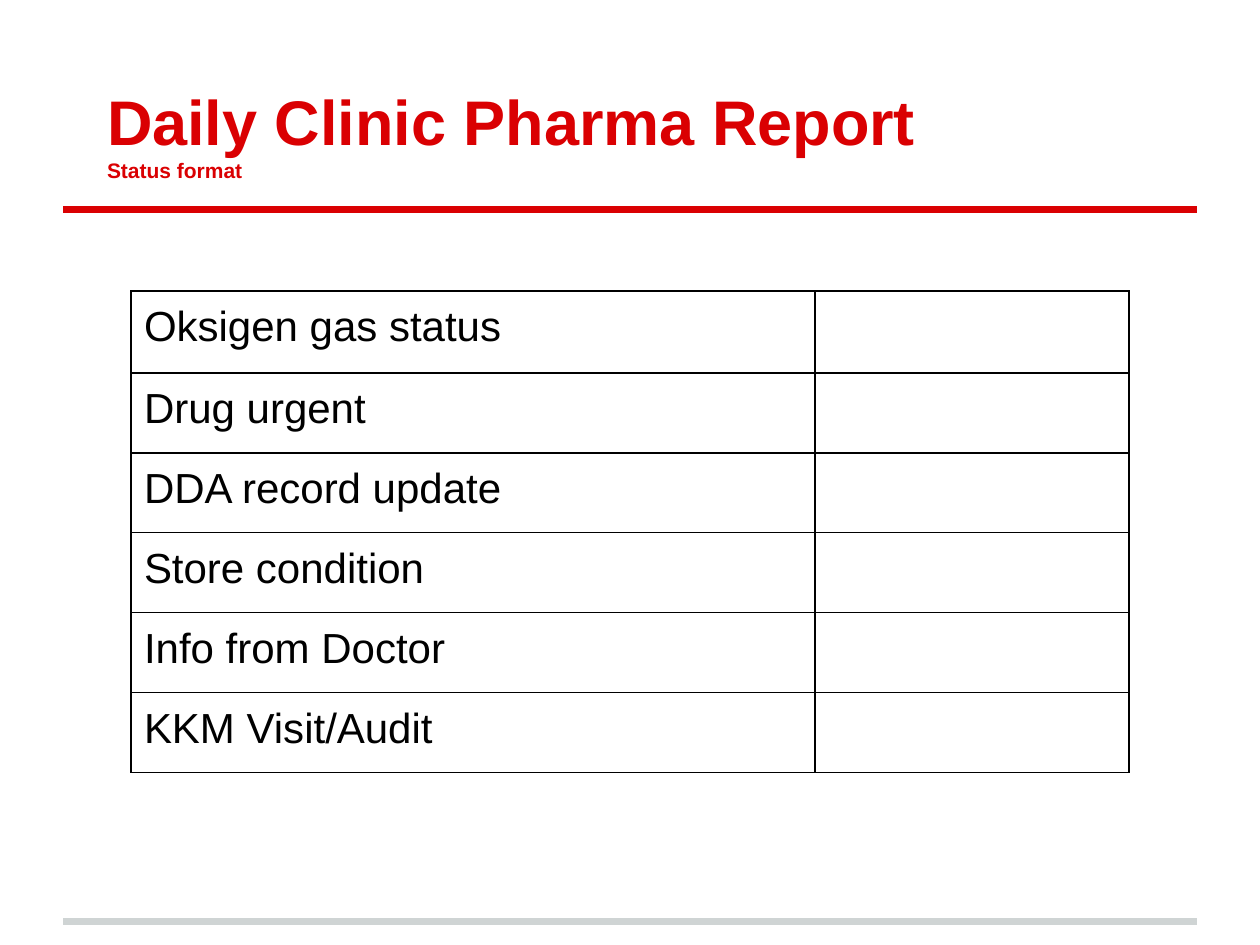
"""Build the daily clinic pharma report slide."""
from dataclasses import dataclass

from lxml.etree import SubElement
from pptx import Presentation
from pptx.dml.color import RGBColor
from pptx.enum.shapes import MSO_CONNECTOR
from pptx.enum.text import MSO_ANCHOR, MSO_AUTO_SIZE, PP_ALIGN
from pptx.oxml.ns import qn
from pptx.util import Pt


@dataclass(frozen=True)
class Theme:
    """Colours, type sizes and line widths of the slide."""
    font: str = "Arial"
    accent: str = "DA0002"
    footer: str = "CFD4D4"
    text: str = "000000"
    title_size: int = 36
    subtitle_size: int = 12
    cell_size: int = 24
    rule_width: int = 4
    border_width: float = 0.75
    inset: int = 13
    indent: int = 31


def emu(px):
    """Turn pixels at 126 to the inch into EMU."""
    return round(px * 914400 / 126)


class PageBuilder:
    """Draws styled elements on one page."""

    def __init__(self, page, theme):
        """Keep the page and its theme."""
        self.page = page
        self.theme = theme

    def style(self, para, size, color, bold=False):
        """Set the font of a paragraph."""
        para.alignment = PP_ALIGN.LEFT
        font = para.font
        font.name, font.size, font.bold = self.theme.font, Pt(size), bold
        font.color.rgb = RGBColor.from_string(color)

    def set_insets(self, box):
        """Give a text frame or cell equal margins."""
        inset = emu(self.theme.inset)
        box.margin_left = box.margin_right = inset
        box.margin_top = box.margin_bottom = inset

    def rule(self, left, right, y, color):
        """Draw a horizontal rule."""
        line = self.page.shapes.add_connector(
            MSO_CONNECTOR.STRAIGHT, emu(left), emu(y), emu(right), emu(y))
        line.line.color.rgb = RGBColor.from_string(color)
        line.line.width = Pt(self.theme.rule_width)
        SubElement(line._element.spPr, qn("a:effectLst"))

    def title(self, left, top, width, height, lines):
        """Place the title, given as pairs of text and size."""
        title = self.page.shapes.title
        title.left, title.top = emu(left), emu(top)
        title.width, title.height = emu(width), emu(height)
        frame = title.text_frame
        frame.text = "\n".join(text for text, _ in lines)
        frame.word_wrap = True
        frame.auto_size = MSO_AUTO_SIZE.NONE
        frame.vertical_anchor = MSO_ANCHOR.BOTTOM
        self.set_insets(frame)
        for para, (_, size) in zip(frame.paragraphs, lines):
            self.style(para, size, self.theme.accent, bold=True)
            properties = para._p.get_or_add_pPr()
            properties.set("marL", "0")
            properties.set("indent", str(emu(self.theme.indent)))

    def borders(self, cell):
        """Draw a thin line on every side of a cell."""
        properties = cell._tc.get_or_add_tcPr()
        for side in ("a:lnL", "a:lnR", "a:lnT", "a:lnB"):
            line = SubElement(properties, qn(side), w=str(Pt(self.theme.border_width)))
            fill = SubElement(line, qn("a:solidFill"))
            SubElement(fill, qn("a:srgbClr"), val=self.theme.text)

    def table(self, left, top, widths, heights, rows):
        """Add a bordered table without fills."""
        table = self.page.shapes.add_table(
            len(rows), len(widths), emu(left), emu(top),
            emu(sum(widths)), emu(sum(heights))).table
        table.first_row = table.horz_banding = False
        for column, width in zip(table.columns, widths):
            column.width = emu(width)
        for row, height, texts in zip(table.rows, heights, rows):
            row.height = emu(height)
            for cell, text in zip(row.cells, texts):
                cell.text = text
                self.set_insets(cell)
                self.style(cell.text_frame.paragraphs[0], self.theme.cell_size, self.theme.text)
                self.borders(cell)
                cell.fill.background()


def main():
    """Build and save the deck."""
    deck = Presentation()
    deck.slide_width, deck.slide_height = emu(1260), emu(945)
    theme = Theme()
    builder = PageBuilder(deck.slides.add_slide(deck.slide_layouts[5]), theme)
    builder.rule(63, 1197, 922, theme.footer)
    builder.rule(63, 1197, 210, theme.accent)
    builder.title(63, 38, 1134, 158, [
        ("Daily Clinic Pharma Report", theme.title_size),
        ("Status format", theme.subtitle_size),
    ])
    items = ["Oksigen gas status", "Drug urgent", "DDA record update",
             "Store condition", "Info from Doctor", "KKM Visit/Audit"]
    builder.table(131, 291, [684, 314], [82] + [80] * 5, [(item, "") for item in items])
    deck.save("out.pptx")


if __name__ == "__main__":
    main()
